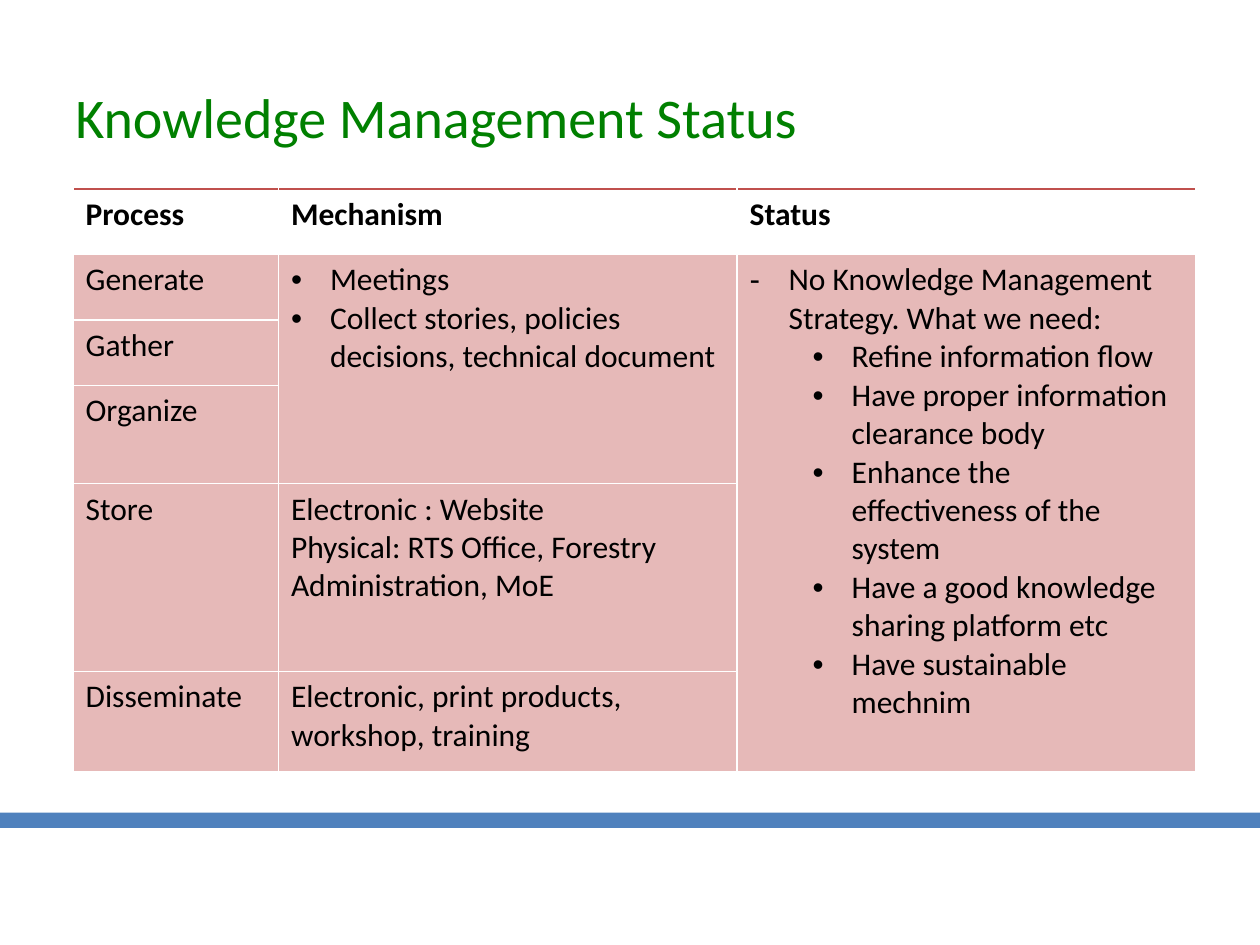
from lxml.etree import SubElement
from pptx import Presentation
from pptx.dml.color import RGBColor
from pptx.enum.shapes import MSO_SHAPE as Shape
from pptx.enum.text import MSO_ANCHOR as Anchor
from pptx.oxml import parse_xml
from pptx.oxml.ns import nsdecls, qn
from pptx.util import Inches, Pt

BLACK = RGBColor(0x00, 0x00, 0x00)
WHITE = RGBColor(0xFF, 0xFF, 0xFF)
GREEN = RGBColor(0x00, 0x80, 0x00)
BLUE = RGBColor(0x4F, 0x81, 0xBD)
RED = RGBColor(0xC0, 0x50, 0x4D)
PINK = RGBColor(0xE6, 0xB9, 0xB8)

# Content: each paragraph is (bullet, level, text)
TITLE = "Knowledge Management Status"
HEADER = ["Process", "Mechanism", "Status"]
PROCESSES = ["Generate", "Gather", "Organize", "Store", "Disseminate"]
# Mechanism and status blocks: (row, column, rows spanned, paragraphs)
BLOCKS = [
    (1, 1, 3, [("•", 0, "Meetings"),
               ("•", 0, "Collect stories, policies decisions, technical document")]),
    (4, 1, 1, [("", 0, "Electronic : Website"),
               ("", 0, "Physical: RTS Office, Forestry Administration, MoE")]),
    (5, 1, 1, [("", 0, "Electronic, print products, workshop, training")]),
    (1, 2, 5, [("-", 0, "No Knowledge Management Strategy. What we need:"),
               ("•", 1, "Refine information flow"),
               ("•", 1, "Have proper information clearance body"),
               ("•", 1, "Enhance the effectiveness of the system"),
               ("•", 1, "Have a good knowledge sharing platform etc"),
               ("•", 1, "Have sustainable mechnim")]),
]

# Layout in inches
SLIDE_W, SLIDE_H = 10, 7.5
COLUMNS = [1.63, 3.64, 3.64]
ROWS = [0.52, 0.52, 0.52, 0.78, 1.49, 0.8]
TABLE_LEFT, TABLE_TOP = 0.58, 1.5
HANG, LEVEL_STEP = 0.31, 0.5

TITLE_FONT = {"name": "Calibri", "size": Pt(32), "bold": False}
BODY_FONT = {"name": "Calibri", "size": Pt(18), "bold": False}
HEADER_FONT = {**BODY_FONT, "bold": True}


def write(frame, paragraphs, font, color):
    for index, (bullet, level, text) in enumerate(paragraphs):
        para = frame.paragraphs[0] if index == 0 else frame.add_paragraph()
        if bullet:
            para.level = level
            props = para._p.get_or_add_pPr()
            props.set("marL", str(Inches(HANG + level * LEVEL_STEP)))
            props.set("indent", str(-Inches(HANG)))
            SubElement(props, qn("a:buFont"), typeface="Arial")
            SubElement(props, qn("a:buChar"), char=bullet)
        span = para.add_run()
        span.text = text
        for name, value in font.items():
            setattr(span.font, name, value)
        span.font.color.rgb = color


def set_borders(cell, top):
    props = cell._tc.get_or_add_tcPr()
    sides = {"lnL": WHITE, "lnR": WHITE, "lnT": top, "lnB": WHITE}
    for index, (side, color) in enumerate(sides.items()):
        props.insert(index, parse_xml(
            f'<a:{side} {nsdecls("a")} w="{Pt(1)}"><a:solidFill>'
            f'<a:srgbClr val="{color}"/></a:solidFill></a:{side}>'))


def main():
    deck = Presentation()
    deck.slide_width, deck.slide_height = Inches(SLIDE_W), Inches(SLIDE_H)
    page = deck.slides.add_slide(deck.slide_layouts[6])

    # Footer band
    band = page.shapes.add_shape(
        Shape.RECTANGLE, 0, Inches(6.45), deck.slide_width, Inches(0.12))
    band.shadow.inherit = False
    band.fill.solid()
    band.fill.fore_color.rgb = BLUE
    band.line.fill.background()

    # Title
    box = page.shapes.add_textbox(Inches(0.5), Inches(0.4), Inches(9), Inches(1.05))
    box.text_frame.word_wrap = True
    box.text_frame.vertical_anchor = Anchor.MIDDLE
    write(box.text_frame, [("", 0, TITLE)], TITLE_FONT, GREEN)

    # Table grid
    table = page.shapes.add_table(
        len(ROWS), len(COLUMNS), Inches(TABLE_LEFT), Inches(TABLE_TOP),
        Inches(sum(COLUMNS)), Inches(sum(ROWS))).table
    table.horz_banding = False
    for column, width in zip(table.columns, COLUMNS):
        column.width = Inches(width)
    for index, (row, height) in enumerate(zip(table.rows, ROWS)):
        row.height = Inches(height)
        for cell in row.cells:
            if index == 0:
                cell.fill.background()
            else:
                cell.fill.solid()
                cell.fill.fore_color.rgb = PINK
            set_borders(cell, WHITE if index else RED)

    # Table text
    for column, text in enumerate(HEADER):
        write(table.cell(0, column).text_frame, [("", 0, text)], HEADER_FONT, BLACK)
    for row, text in enumerate(PROCESSES, 1):
        write(table.cell(row, 0).text_frame, [("", 0, text)], BODY_FONT, BLACK)
    for row, column, height, paragraphs in BLOCKS:
        cell = table.cell(row, column)
        if height > 1:
            cell.merge(table.cell(row + height - 1, column))
        write(cell.text_frame, paragraphs, BODY_FONT, BLACK)

    deck.save("out.pptx")


if __name__ == "__main__":
    main()
